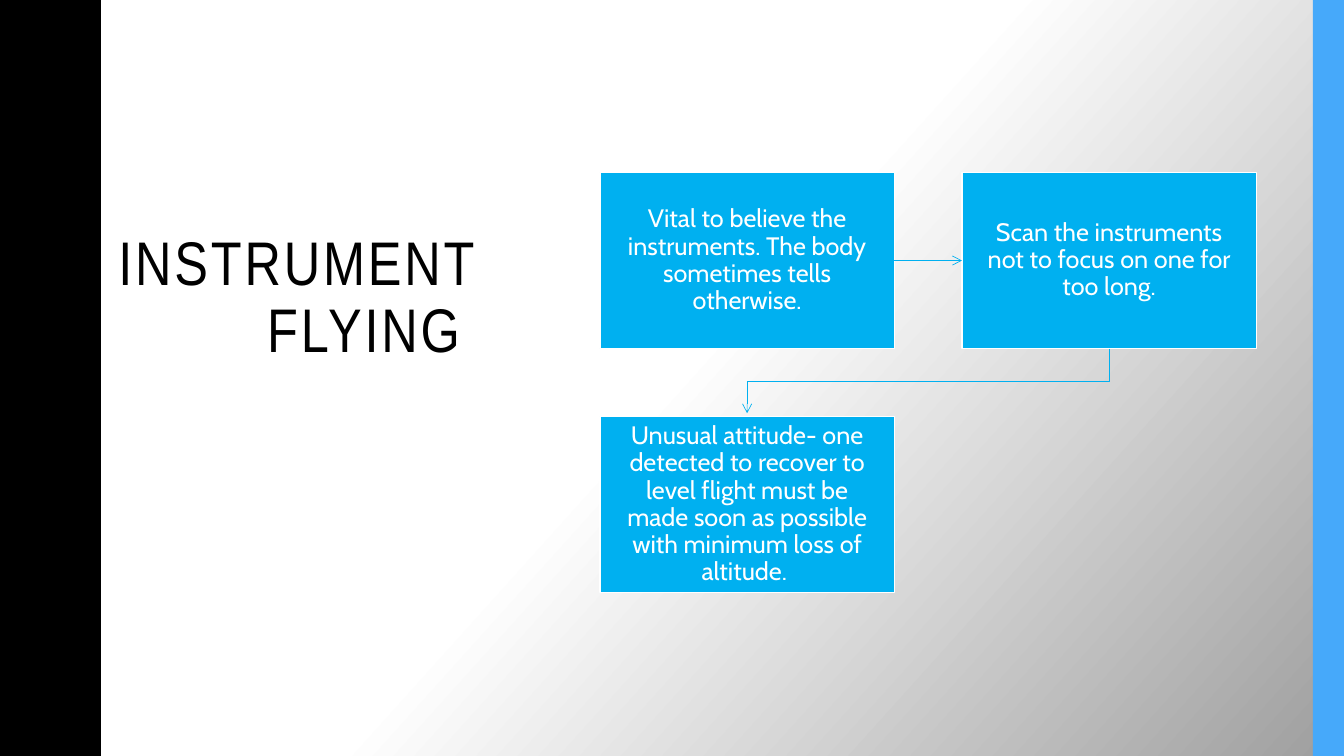
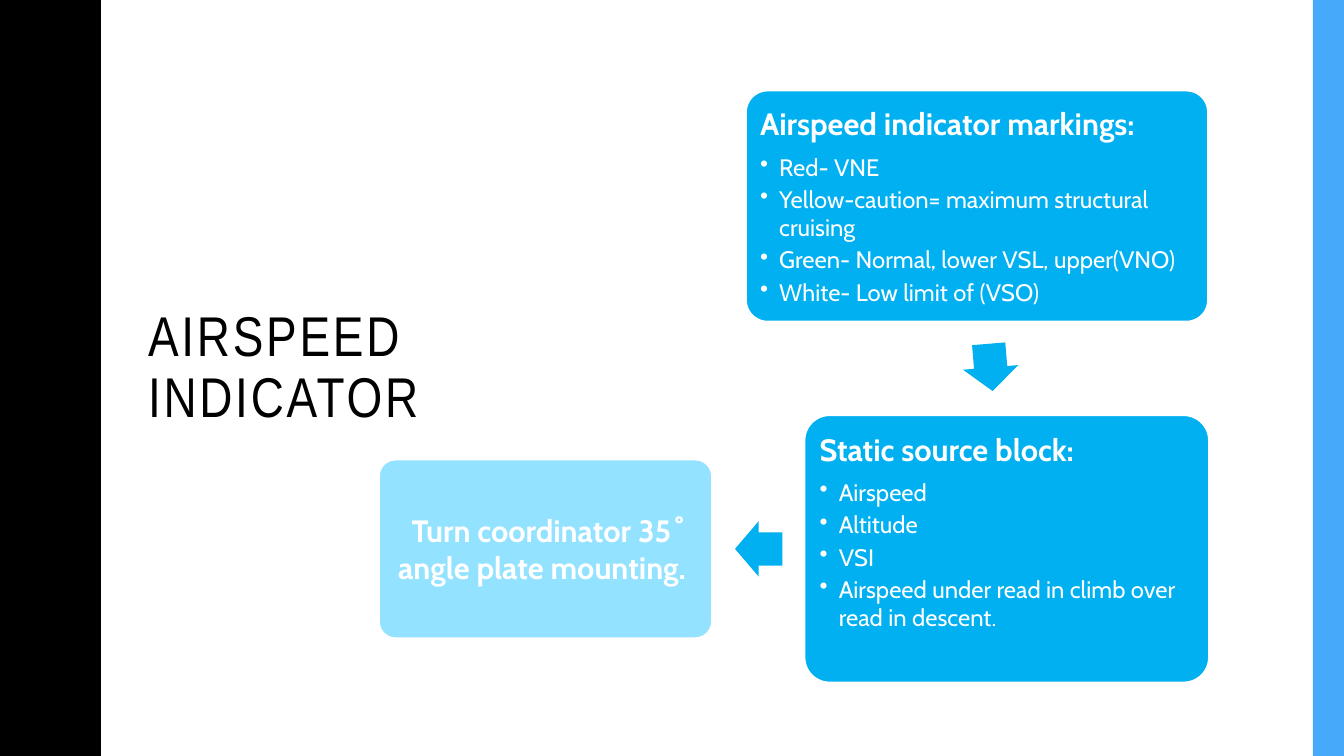
from lxml.etree import SubElement
from pptx import Presentation
from pptx.dml.color import RGBColor
from pptx.enum.shapes import MSO_CONNECTOR, MSO_SHAPE
from pptx.enum.text import MSO_ANCHOR, PP_ALIGN
from pptx.oxml.ns import qn
from pptx.util import Inches, Pt

BLACK = RGBColor(0x00, 0x00, 0x00)
WHITE = RGBColor(0xFF, 0xFF, 0xFF)
GRAY = RGBColor(0x9E, 0x9E, 0x9E)
CYAN = RGBColor(0x00, 0xB0, 0xF0)
PALE_CYAN = RGBColor(0x93, 0xE2, 0xFF)
SIDE_BLUE = RGBColor(0x46, 0xA9, 0xFA)
TITLE_FONT = "Arial Narrow"
BODY_FONT = "Cabin"

WIDTH, HEIGHT = 13.33, 7.5
WAVE_PERIOD = 1.5
HALF_WAVE = [
    (0.78, 0), (0.78, 0.07), (0.79, 0.14), (0.8, 0.2), (0.81, 0.25),
    (0.83, 0.29), (0.85, 0.33), (0.87, 0.38), (0.89, 0.42), (0.91, 0.46),
    (0.93, 0.5), (0.95, 0.55), (0.96, 0.61), (0.97, 0.68), (0.97, 0.75),
]

FLYING_STEPS = [
    "Vital to believe the instruments. The body sometimes tells otherwise.",
    "Scan the instruments not to focus on one for too long.",
    "Unusual attitude- one detected to recover to level flight must be made "
    "soon as possible with minimum loss of altitude. ",
]
STEP_LEFT, STEP_TOP = 5.95, 1.71
STEP_WIDTH, STEP_HEIGHT = 2.92, 1.75
STEP_PITCH_X, STEP_PITCH_Y = 3.59, 2.42
STEP_COLUMNS = 2

AIRSPEED_CARDS = [
    {
        "area": (7.38, 0.88, 4.62, 2.33),
        "fill": CYAN,
        "heading": "Airspeed indicator markings:",
        "points": [
            "Red- VNE",
            "Yellow-caution= maximum structural cruising",
            "Green- Normal, lower VSL, upper(VNO)",
            "White- Low limit of (VSO)",
        ],
    },
    {
        "area": (7.96, 4.1, 4.05, 2.69),
        "fill": CYAN,
        "heading": "Static source block:",
        "points": [
            "Airspeed",
            "Altitude",
            "VSI",
            "Airspeed under read in climb over read in descent.",
        ],
    },
    {
        "area": (3.74, 4.54, 3.34, 1.81),
        "fill": PALE_CYAN,
        "heading": "Turn coordinator 35 ̊ angle plate mounting. ",
        "points": [],
    },
]
BLOCK_ARROWS = [(9.59, 3.37, 85.2), (7.29, 5.17, 180)]
ARROW_SIZE = (0.47, 0.55)


def paint(shape, fill, line=None, line_width=1):
    shape.shadow.inherit = False
    shape.fill.solid()
    shape.fill.fore_color.rgb = fill
    if line is None:
        shape.line.fill.background()
    else:
        shape.line.color.rgb = line
        shape.line.width = Pt(line_width)


def add_box(page, kind, area, fill, **line):
    box = page.shapes.add_shape(kind, *map(Inches, area))
    paint(box, fill, **line)
    return box


def set_frame(shape, anchor, inset_x, inset_y):
    frame = shape.text_frame
    frame.word_wrap = True
    frame.vertical_anchor = anchor
    frame.margin_left = frame.margin_right = Inches(inset_x)
    frame.margin_top = frame.margin_bottom = Inches(inset_y)
    return frame


def write(frame, text, size, font=BODY_FONT, color=WHITE, bold=False,
          align=PP_ALIGN.LEFT, line_spacing=1.0, after=0, bullet=False,
          tracking=0):
    para = frame.paragraphs[0]
    if para.runs:
        para = frame.add_paragraph()
    if bullet:
        properties = para._p.get_or_add_pPr()
        properties.set("marL", str(Inches(0.19)))
        properties.set("indent", str(-Inches(0.19)))
        SubElement(properties, qn("a:buChar")).set("char", "•")
    para.alignment = align
    para.line_spacing = line_spacing
    para.space_after = Pt(size * after)
    span = para.add_run()
    span.text = text
    span.font.name = font
    span.font.size = Pt(size)
    span.font.bold = bold
    span.font.color.rgb = color
    if tracking:
        span._r.get_or_add_rPr().set("spc", str(tracking * 100))


def add_wave(page):
    mirrored = [(x, WAVE_PERIOD - y) for x, y in reversed(HALF_WAVE[:-1])]
    period = HALF_WAVE + mirrored
    edge = [(x, y + turn * WAVE_PERIOD)
            for turn in range(round(HEIGHT / WAVE_PERIOD)) for x, y in period]
    builder = page.shapes.build_freeform(0, 0, scale=Inches(1))
    builder.add_line_segments(edge + [(0, HEIGHT)], close=True)
    paint(builder.convert_to_shape(), BLACK)


def add_page(deck, title, area, size, anchor, align):
    page = deck.slides.add_slide(deck.slide_layouts[6])
    add_wave(page)
    add_box(page, MSO_SHAPE.RECTANGLE, (13.02, 0, 0.31, HEIGHT), SIDE_BLUE)
    box = page.shapes.add_textbox(*map(Inches, area))
    write(set_frame(box, anchor, 0.1, 0.05), title, size, font=TITLE_FONT,
          color=BLACK, align=align, line_spacing=0.9, tracking=2)
    return page


def add_link(page, kind, start, end):
    link = page.shapes.add_connector(kind, *map(Inches, start + end))
    link.line.color.rgb = CYAN
    link.line.width = Pt(0.5)
    SubElement(link.line._get_or_add_ln(), qn("a:tailEnd")).set("type", "arrow")
    SubElement(link._element.spPr, qn("a:effectLst"))
    return link


def add_flying_page(deck):
    page = add_page(deck, "INSTRUMENT FLYING ", (0.74, 2.26, 4.09, 2.91), 44,
                    MSO_ANCHOR.TOP, PP_ALIGN.RIGHT)
    fill = page.background.fill
    fill.gradient()
    fill.gradient_angle = 360 - 42
    for stop, color, position in zip(fill.gradient_stops, (WHITE, GRAY), (0.5, 1)):
        stop.color.rgb = color
        stop.position = position

    boxes = []
    for index, text in enumerate(FLYING_STEPS):
        row, column = divmod(index, STEP_COLUMNS)
        area = (STEP_LEFT + column * STEP_PITCH_X, STEP_TOP + row * STEP_PITCH_Y,
                STEP_WIDTH, STEP_HEIGHT)
        box = add_box(page, MSO_SHAPE.RECTANGLE, area, CYAN, line=WHITE)
        write(set_frame(box, MSO_ANCHOR.MIDDLE, 0.14, 0.15), text, 18,
              align=PP_ALIGN.CENTER, line_spacing=0.9, after=0.35)
        boxes.append(box)

    across = add_link(page, MSO_CONNECTOR.STRAIGHT, (0, 0), (1, 1))
    across.begin_connect(boxes[0], 3)
    across.end_connect(boxes[1], 1)

    drop = STEP_PITCH_Y - STEP_HEIGHT - 0.03
    center_x = STEP_LEFT + (STEP_WIDTH + STEP_PITCH_X) / 2
    center_y = STEP_TOP + STEP_HEIGHT + drop / 2
    back = add_link(page, MSO_CONNECTOR.ELBOW,
                    (center_x - drop / 2, center_y - STEP_PITCH_X / 2),
                    (center_x + drop / 2, center_y + STEP_PITCH_X / 2))
    back._element.spPr.find(qn("a:xfrm")).set("rot", str(90 * 60000))


def add_airspeed_page(deck):
    page = add_page(deck, "AIRSPEED INDICATOR", (1.37, 0.7, 3.7, 5.92), 40,
                    MSO_ANCHOR.MIDDLE, PP_ALIGN.LEFT)
    page.background.fill.solid()
    page.background.fill.fore_color.rgb = WHITE
    for card in AIRSPEED_CARDS:
        box = add_box(page, MSO_SHAPE.ROUNDED_RECTANGLE, card["area"],
                      card["fill"], line=WHITE, line_width=4)
        box.adjustments[0] = 0.1
        listed = bool(card["points"])
        anchor = MSO_ANCHOR.TOP if listed else MSO_ANCHOR.MIDDLE
        align = PP_ALIGN.LEFT if listed else PP_ALIGN.CENTER
        frame = set_frame(box, anchor, 0.09, 0.09)
        write(frame, card["heading"], 22, bold=True, align=align, after=0.35)
        for point in card["points"]:
            write(frame, point, 17, after=0.15, bullet=True)
    for left, top, angle in BLOCK_ARROWS:
        arrow = add_box(page, MSO_SHAPE.RIGHT_ARROW, (left, top) + ARROW_SIZE, CYAN)
        arrow.adjustments[0] = 0.6
        arrow.adjustments[1] = 0.5
        arrow.rotation = angle


def main():
    deck = Presentation()
    deck.slide_width = Inches(WIDTH)
    deck.slide_height = Inches(HEIGHT)
    add_flying_page(deck)
    add_airspeed_page(deck)
    deck.save("out.pptx")


if __name__ == "__main__":
    main()
